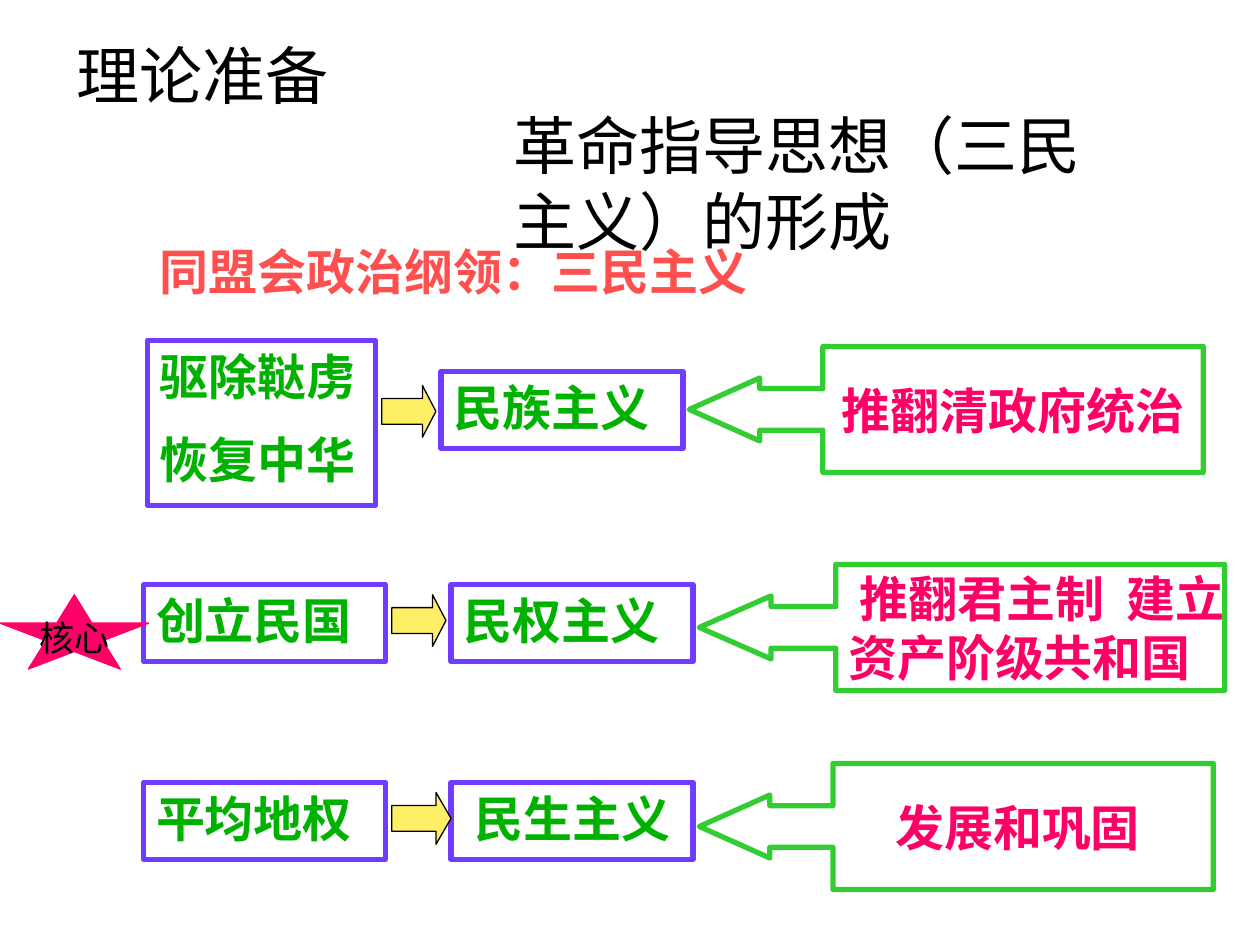
from dataclasses import dataclass

from pptx import Presentation
from pptx import util as u
from pptx.dml.color import RGBColor
from pptx.enum import shapes, text


@dataclass(frozen=True)
class Theme:
    serif: str = "Times New Roman"
    sans: str = "Arial"
    black: str = "000000"
    violet: str = "703DFF"
    green: str = "00B200"
    lime: str = "33CC33"
    yellow: str = "FFEF66"
    pink: str = "FF0066"
    coral: str = "FF5050"
    title: int = 36
    body: int = 28
    badge: int = 20
    thick: float = 3
    thin: float = 0.75


class Board:
    """Draws the parts of one slide in a shared theme."""

    def __init__(self, slide, theme):
        self.slide, self.theme = slide, theme

    def letter(self, holder, lines, frame_format, font_format, color, paragraph_format=None, hanging=0):
        frame = holder.text_frame
        for name, value in frame_format.items():
            setattr(frame, name, value)
        for index, line in enumerate(lines):
            paragraph = frame.paragraphs[0] if index == 0 else frame.add_paragraph()
            layout = {"alignment": text.PP_ALIGN.LEFT, **(paragraph_format or {})}
            if index == 0:
                layout.pop("space_before", None)
            for name, value in layout.items():
                setattr(paragraph, name, value)
            if hanging:
                properties = paragraph._p.get_or_add_pPr()
                properties.set("marL", str(u.Inches(hanging)))
                properties.set("indent", str(-u.Inches(hanging)))
            run = paragraph.add_run()
            run.text = line
            for name, value in font_format.items():
                setattr(run.font, name, value)
            run.font.color.rgb = RGBColor.from_string(color)

    def outline(self, kind, place, line, weight, fill=None, adjustments=()):
        shape = self.slide.shapes.add_shape(kind, *map(u.Inches, place))
        shape.shadow.inherit = False
        for index, value in enumerate(adjustments):
            shape.adjustments[index] = value
        if fill:
            shape.fill.solid()
            shape.fill.fore_color.rgb = RGBColor.from_string(fill)
        else:
            shape.fill.background()
        shape.line.color.rgb = RGBColor.from_string(line)
        shape.line.width = u.Pt(weight)
        return shape

    def box(self, place, lines):
        t = self.theme
        self.letter(
            self.outline(shapes.MSO_SHAPE.RECTANGLE, place, t.violet, t.thick), lines,
            {"word_wrap": True, "auto_size": text.MSO_AUTO_SIZE.SHAPE_TO_FIT_TEXT,
             "vertical_anchor": text.MSO_ANCHOR.TOP},
            {"name": t.serif, "size": u.Pt(t.body), "bold": True}, t.green,
            {"space_before": u.Pt(t.body / 2)})

    def arrow(self, place, head):
        t = self.theme
        self.outline(shapes.MSO_SHAPE.RIGHT_ARROW, place, t.black, t.thin, t.yellow, (0.5, head))

    def callout(self, place, neck, lines, hanging=0):
        t = self.theme
        align = text.PP_ALIGN.LEFT if hanging else text.PP_ALIGN.CENTER
        self.letter(
            self.outline(shapes.MSO_SHAPE.LEFT_ARROW_CALLOUT, place, t.lime, t.thick,
                         adjustments=(0.33, 0.25, neck, 0.74)), lines,
            {"word_wrap": False, "vertical_anchor": text.MSO_ANCHOR.MIDDLE},
            {"name": t.serif, "size": u.Pt(t.body), "bold": True}, t.pink,
            {"alignment": align}, hanging)

    def star(self, place, label):
        t = self.theme
        self.letter(
            self.outline(shapes.MSO_SHAPE.STAR_5_POINT, place, t.pink, t.thin, t.pink), [label],
            {"word_wrap": False, "vertical_anchor": text.MSO_ANCHOR.MIDDLE},
            {"name": t.serif, "size": u.Pt(t.badge)}, t.black,
            {"alignment": text.PP_ALIGN.CENTER})

    def heading(self, place, words, size, color, bold=False):
        self.letter(
            self.slide.shapes.add_textbox(*map(u.Inches, place)), [words],
            {"word_wrap": True, "auto_size": text.MSO_AUTO_SIZE.SHAPE_TO_FIT_TEXT},
            {"name": self.theme.sans, "size": u.Pt(size), "bold": bold}, color)


def main():
    deck = Presentation()
    deck.slide_width, deck.slide_height = u.Inches(10), u.Inches(7.5)
    theme = Theme()
    board = Board(deck.slides.add_slide(deck.slide_layouts[6]), theme)

    slogans = [
        ((1.17, 2.7, 1.81, 1.31), ["驱除鞑虏", "恢复中华"]),
        ((1.14, 4.64, 1.92, 0.61), ["创立民国"]),
        ((1.14, 6.21, 1.92, 0.61), ["平均地权"]),
    ]
    principles = [
        ((3.5, 2.95, 1.92, 0.61), ["民族主义"]),
        ((3.58, 4.64, 1.92, 0.61), ["民权主义"]),
        ((3.58, 6.21, 1.92, 0.61), [" 民生主义"]),
    ]
    for place, lines in slogans + principles:
        board.box(place, lines)

    board.arrow((3.11, 6.29, 0.47, 0.41), 0.29)
    board.star((0, 4.72, 1.18, 0.59), "核心")

    board.callout((5.47, 2.75, 4.08, 1), 0.56, ["推翻清政府统治"])
    board.callout((5.55, 4.48, 4.17, 1), 0.57, [" 推翻君主制  建立", "资产阶级共和国"], hanging=0.5)
    board.callout((5.55, 6.06, 4.08, 1), 0.56, ["发展和巩固 "])

    for left, top in ((3.11, 4.72), (3.03, 3.06)):
        board.arrow((left, top, 0.43, 0.41), 0.26)

    board.heading((1.17, 1.87, 7.32, 0.57), "同盟会政治纲领：三民主义", theme.body, theme.coral, bold=True)
    board.heading((0.51, 0.24, 3.75, 0.7), "理论准备", theme.title, theme.black)
    board.heading((3.98, 0.8, 5.17, 1.3), "革命指导思想（三民主义）的形成", theme.title, theme.black)

    deck.save("out.pptx")


if __name__ == "__main__":
    main()
